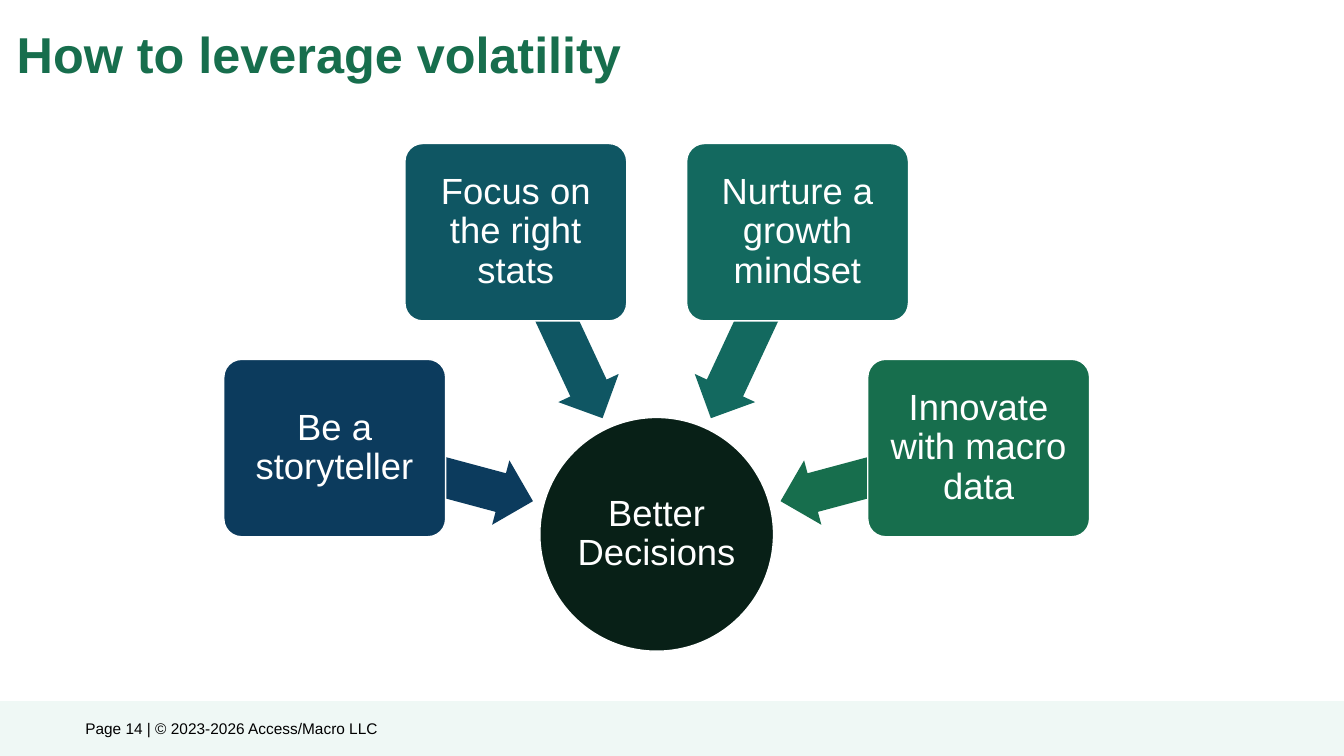
from math import cos, radians, sin

from pptx import Presentation
from pptx.dml.color import RGBColor
from pptx.enum.shapes import MSO_SHAPE
from pptx.enum.text import MSO_ANCHOR, MSO_AUTO_SIZE, PP_ALIGN
from pptx.util import Cm, Pt

RECTANGLE = MSO_SHAPE.RECTANGLE
CIRCLE = MSO_SHAPE.OVAL
ROUNDED = MSO_SHAPE.ROUNDED_RECTANGLE
LEFT_ARROW = MSO_SHAPE.LEFT_ARROW
MIDDLE = MSO_ANCHOR.MIDDLE
LEFT, CENTER = PP_ALIGN.LEFT, PP_ALIGN.CENTER
NO_AUTOFIT = MSO_AUTO_SIZE.NONE

WHITE = RGBColor(0xFF, 0xFF, 0xFF)
BLACK = RGBColor(0x00, 0x00, 0x00)
MINT = RGBColor(0xEF, 0xF8, 0xF5)
GREEN = RGBColor(0x17, 0x6E, 0x4D)
DARK_GREEN = RGBColor(0x08, 0x20, 0x17)
NAVY = RGBColor(0x0C, 0x3B, 0x5D)
PETROL = RGBColor(0x0F, 0x56, 0x63)
TEAL = RGBColor(0x13, 0x69, 0x5F)

FONT = "Arial"
SLIDE_WIDTH, SLIDE_HEIGHT = Cm(33.87), Cm(19.05)

# Habits around the hub: direction in degrees, wording, colour
HABITS = [
    (195, "Be a storyteller", NAVY),
    (245, "Focus on the right stats", PETROL),
    (295, "Nurture a growth mindset", TEAL),
    (345, "Innovate with macro data", GREEN),
]


def write(shape, text, size, color, align, margins, bold=False, wrap=True):
    """Fill a shape with one formatted paragraph."""
    frame = shape.text_frame
    frame.text = text
    frame.word_wrap = wrap
    frame.auto_size = NO_AUTOFIT
    frame.vertical_anchor = MIDDLE
    frame.margin_left = frame.margin_right = margins[0]
    frame.margin_top = frame.margin_bottom = margins[1]
    paragraph = frame.paragraphs[0]
    paragraph.alignment = align
    font = paragraph.runs[0].font
    font.name, font.size, font.bold = FONT, Pt(size), bold
    font.color.rgb = color
    return paragraph


def add_solid(slide, kind, center_x, center_y, width, height, color, outlined=False):
    """Add a filled shape around a centre point."""
    shape = slide.shapes.add_shape(
        kind, int(center_x - width / 2), int(center_y - height / 2), width, height)
    shape.shadow.inherit = False
    shape.fill.solid()
    shape.fill.fore_color.rgb = color
    if outlined:
        shape.line.color.rgb = WHITE
        shape.line.width = Pt(1)
    else:
        shape.line.fill.background()
    return shape


def label(shape, text, margin):
    write(shape, text, 26, WHITE, CENTER, (margin, margin)).line_spacing = 0.9


def add_footer(slide, left, top, width, height):
    # Band
    middle = top + height / 2
    add_solid(slide, RECTANGLE, left + width / 2, middle, width, height, MINT)
    # Page and copyright line
    line_height = Cm(0.74)
    copyright_line = slide.shapes.add_textbox(
        left + Cm(1.9), int(middle - line_height / 2), Cm(8), line_height)
    write(copyright_line, "Page 14 | © 2023-2026 Access/Macro LLC", 11, BLACK,
          LEFT, (Cm(0.25), Cm(0.13)), wrap=False)


def add_title(slide, left, top, width, height):
    title = slide.shapes.title
    title.left, title.top, title.width, title.height = left, top, width, height
    write(title, "How to leverage volatility", 36, GREEN, LEFT,
          (0, Cm(0.13)), bold=True)


def add_radial_diagram(slide, left, top, width, height):
    # Hub at the bottom centre of the box
    diameter = Cm(5.89)
    hub_x, hub_y = left + width / 2, top + height - diameter / 2
    hub = add_solid(slide, CIRCLE, hub_x, hub_y, diameter, diameter,
                    DARK_GREEN, outlined=True)
    label(hub, "Better Decisions", Cm(0.05))

    arrow_radius, card_radius = Cm(5.81), Cm(8.4)
    for angle, text, color in HABITS:
        across, down = cos(radians(angle)), sin(radians(angle))
        # Arrow towards the hub
        arrow = add_solid(slide, LEFT_ARROW, hub_x + arrow_radius * across,
                          hub_y + arrow_radius * down, Cm(5.16), Cm(1.68), color)
        arrow.adjustments[0], arrow.adjustments[1] = 0.6, 0.5
        arrow.rotation = angle
        # Card, covering the tail of its arrow
        card = add_solid(slide, ROUNDED, hub_x + card_radius * across,
                         hub_y + card_radius * down, Cm(5.59), Cm(4.47),
                         color, outlined=True)
        card.adjustments[0] = 0.1
        label(card, text, Cm(0.13))


def main():
    deck = Presentation()
    deck.slide_width, deck.slide_height = SLIDE_WIDTH, SLIDE_HEIGHT
    slide = deck.slides.add_slide(deck.slide_layouts[5])
    footer_height = Cm(1.38)
    add_footer(slide, 0, SLIDE_HEIGHT - footer_height, SLIDE_WIDTH, footer_height)
    add_title(slide, Cm(0.42), Cm(0.28), Cm(30.53), Cm(2.11))
    add_radial_diagram(slide, Cm(5.64), Cm(3.63), Cm(21.82), Cm(12.78))
    deck.save("out.pptx")


if __name__ == "__main__":
    main()
